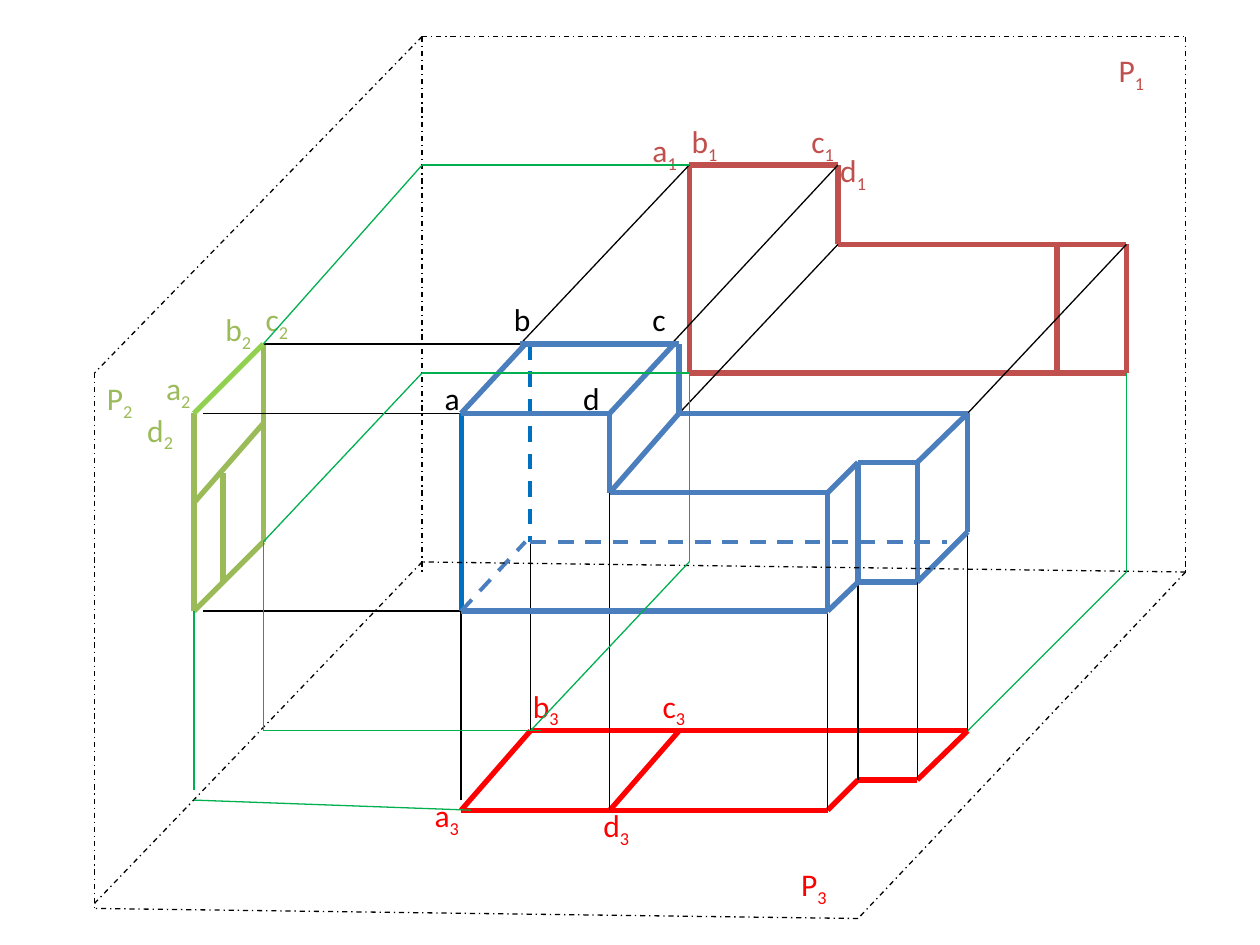
import pptx
import pptx.dml.color
import pptx.enum.dml
import pptx.enum.shapes
import pptx.enum.text
import pptx.oxml.xmlchemy
import pptx.util

COLORS = {
    "black": "000000", "front": "C0504D", "side": "9BBB59", "side_top": "92D050",
    "top": "FF0000", "solid": "4B7EBC", "solid_left": "0070C0", "link": "00B050",
}
DASH = pptx.enum.dml.MSO_LINE.DASH
DASH_DOT = pptx.enum.dml.MSO_LINE.DASH_DOT
STROKES = {
    "thick": {"width": pptx.util.Pt(3)},
    "hidden": {"width": pptx.util.Pt(2.25), "dash_style": DASH},
    "thin": {"width": pptx.util.Pt(0.75)},
    "border": {"width": pptx.util.Pt(0.75), "dash_style": DASH_DOT},
}
FONT = {"name": "Calibri", "size": pptx.util.Pt(18)}
FRAME = {"word_wrap": True, "auto_size": pptx.enum.text.MSO_AUTO_SIZE.SHAPE_TO_FIT_TEXT}

LABELS = [
    ("a", "", "black", 3.43, 2.96), ("b", "", "black", 3.98, 2.33),
    ("c", "", "black", 5.08, 2.33), ("d", "", "black", 4.53, 2.96),
    ("a", "1", "front", 5.08, 0.99), ("b", "1", "front", 5.39, 0.92),
    ("c", "1", "front", 6.34, 0.92), ("d", "1", "front", 6.57, 1.15),
    ("a", "2", "side", 1.22, 2.88), ("b", "2", "side", 1.69, 2.41),
    ("c", "2", "side", 2.01, 2.33), ("d", "2", "side", 1.07, 3.21),
    ("a", "3", "top", 3.35, 6.27), ("b", "3", "top", 4.13, 5.4),
    ("c", "3", "top", 5.16, 5.4), ("d", "3", "top", 4.69, 6.35),
]
FRONT_VIEW = [
    [(5.47, 2.96), (5.47, 1.31), (6.65, 1.31), (6.65, 1.94), (8.94, 1.94), (8.94, 2.96), (5.47, 2.96)],
    [(8.39, 1.94), (8.39, 2.96)],
]
SIDE_VIEW = [
    [(1.54, 3.28), (1.54, 4.85), (2.09, 4.3), (2.09, 2.73)],
    [(1.77, 3.75), (1.77, 4.62)],
    [(1.54, 3.99), (2.09, 3.36)],
]
TOP_VIEW = [
    [(3.66, 6.43), (6.57, 6.43), (6.81, 6.19), (7.28, 6.19), (7.68, 5.8), (4.21, 5.8), (3.66, 6.43)],
    [(4.84, 6.43), (5.39, 5.8)],
]
PROJECTION_RAYS = [
    [(5.47, 1.31), (4.13, 2.73)], [(6.65, 1.31), (5.31, 2.75)],
    [(8.94, 1.94), (7.68, 3.28)], [(6.65, 1.94), (5.39, 3.28)],
    [(2.09, 2.73), (4.21, 2.73)], [(1.61, 3.28), (3.66, 3.28)],
    [(1.61, 4.85), (3.74, 4.85)], [(3.66, 6.35), (3.66, 4.14)],
    [(7.68, 5.8), (7.68, 4.22)], [(4.84, 6.43), (4.84, 3.83)],
    [(6.57, 6.43), (6.57, 4.54)], [(4.21, 5.8), (4.21, 4.3)],
    [(7.28, 6.19), (7.28, 4.62)], [(6.81, 6.19), (6.81, 4.62)],
]
SOLID_LEFT_EDGE = [[(3.66, 3.28), (3.66, 4.85)]]
SOLID_HIDDEN_LEFT = [[(4.21, 2.73), (4.21, 4.3)]]
SOLID_HIDDEN_BASE = [[(4.21, 4.3), (7.52, 4.3)], [(3.66, 4.85), (4.17, 4.3)]]
SOLID_EDGES = [
    [(4.13, 2.73), (5.39, 2.73), (5.39, 3.28), (7.68, 3.28), (7.68, 4.22), (7.28, 4.62),
     (6.81, 4.62), (6.57, 4.85), (3.66, 4.85)],
    [(4.17, 2.73), (3.66, 3.28), (4.84, 3.28), (4.84, 3.91), (6.57, 3.91), (6.81, 3.67),
     (7.28, 3.67), (7.68, 3.28)],
    [(4.84, 3.28), (5.35, 2.73)], [(4.84, 3.91), (5.39, 3.28)],
    [(7.28, 3.67), (7.28, 4.62)], [(6.81, 3.67), (6.81, 4.62)],
    [(6.57, 3.91), (6.57, 4.85)],
]
PLANES = [
    ("1", "front", 8.78, 0.36,
     [[(3.35, 0.29), (3.35, 4.54)], [(3.35, 0.29), (9.41, 0.29), (9.41, 4.54), (3.35, 4.46)]]),
    ("3", "top", 6.26, 6.82, [[(9.41, 4.54), (6.81, 7.29), (0.75, 7.21)]]),
    ("2", "side", 0.75, 2.96,
     [[(3.35, 0.29), (0.75, 2.96), (0.75, 7.21)], [(3.35, 4.46), (0.75, 7.17)]]),
]
VIEW_LINKS = [
    [(8.94, 2.96), (8.94, 4.54), (7.68, 5.8)],
    [(5.47, 2.88), (5.47, 4.46), (4.21, 5.8)],
    [(5.47, 1.31), (3.35, 1.31), (2.09, 2.73)],
    [(5.47, 2.96), (3.35, 2.96), (2.09, 4.3), (2.09, 5.8), (4.29, 5.8)],
    [(1.54, 4.85), (1.54, 6.27)],
    [(3.74, 6.43), (1.54, 6.35)],
]
SIDE_TOP_EDGE = [[(1.54, 3.28), (2.09, 2.73)]]


class ProjectionSlide:
    """Draws labels and edge paths on the current slide in one shared style."""

    def __init__(self, deck):
        self.slide = deck.slides.add_slide(deck.slide_layouts[6])
        self.shapes = self.slide.shapes

    def group(self):
        return self.slide.shapes.add_group_shape().shapes

    def label(self, letter, index, color, left, top, shapes=None):
        width = 0.55 if index else 0.39
        box = (shapes or self.shapes).add_textbox(
            *map(pptx.util.Inches, (left, top, width, 0.4)))
        for name, value in FRAME.items():
            setattr(box.text_frame, name, value)
        para = box.text_frame.paragraphs[0]
        for text in filter(None, (letter, index)):
            span = para.add_run()
            span.text = text
            for name, value in FONT.items():
                setattr(span.font, name, value)
            span.font.color.rgb = pptx.dml.color.RGBColor.from_string(COLORS[color])
            if text == index:
                span._r.get_or_add_rPr().set("baseline", "-25000")

    def edges(self, paths, color, stroke, shapes=None):
        for path in paths:
            for start, end in zip(path, path[1:]):
                edge = (shapes or self.shapes).add_connector(
                    pptx.enum.shapes.MSO_CONNECTOR.STRAIGHT,
                    *map(pptx.util.Inches, start + end))
                edge.line.color.rgb = pptx.dml.color.RGBColor.from_string(COLORS[color])
                for name, value in STROKES[stroke].items():
                    setattr(edge.line, name, value)
                edge._element.spPr.append(pptx.oxml.xmlchemy.OxmlElement("a:effectLst"))


def main():
    deck = pptx.Presentation()
    deck.slide_width = pptx.util.Inches(10)
    deck.slide_height = pptx.util.Inches(7.5)
    page = ProjectionSlide(deck)
    for label in LABELS:
        page.label(*label)
    page.edges(FRONT_VIEW, "front", "thick")
    page.edges(SIDE_VIEW, "side", "thick")
    page.edges(TOP_VIEW, "top", "thick")
    page.edges(PROJECTION_RAYS, "black", "thin")
    solid = page.group()
    page.edges(SOLID_LEFT_EDGE, "solid_left", "thick", solid)
    page.edges(SOLID_HIDDEN_LEFT, "solid_left", "hidden", solid)
    page.edges(SOLID_HIDDEN_BASE, "solid", "hidden", solid)
    page.edges(SOLID_EDGES, "solid", "thick", solid)
    for index, color, left, top, borders in PLANES:
        plane = page.group()
        page.edges(borders, "black", "border", plane)
        page.label("P", index, color, left, top, plane)
    page.edges(VIEW_LINKS, "link", "thin")
    page.edges(SIDE_TOP_EDGE, "side_top", "thick")
    deck.save("out.pptx")


if __name__ == "__main__":
    main()
